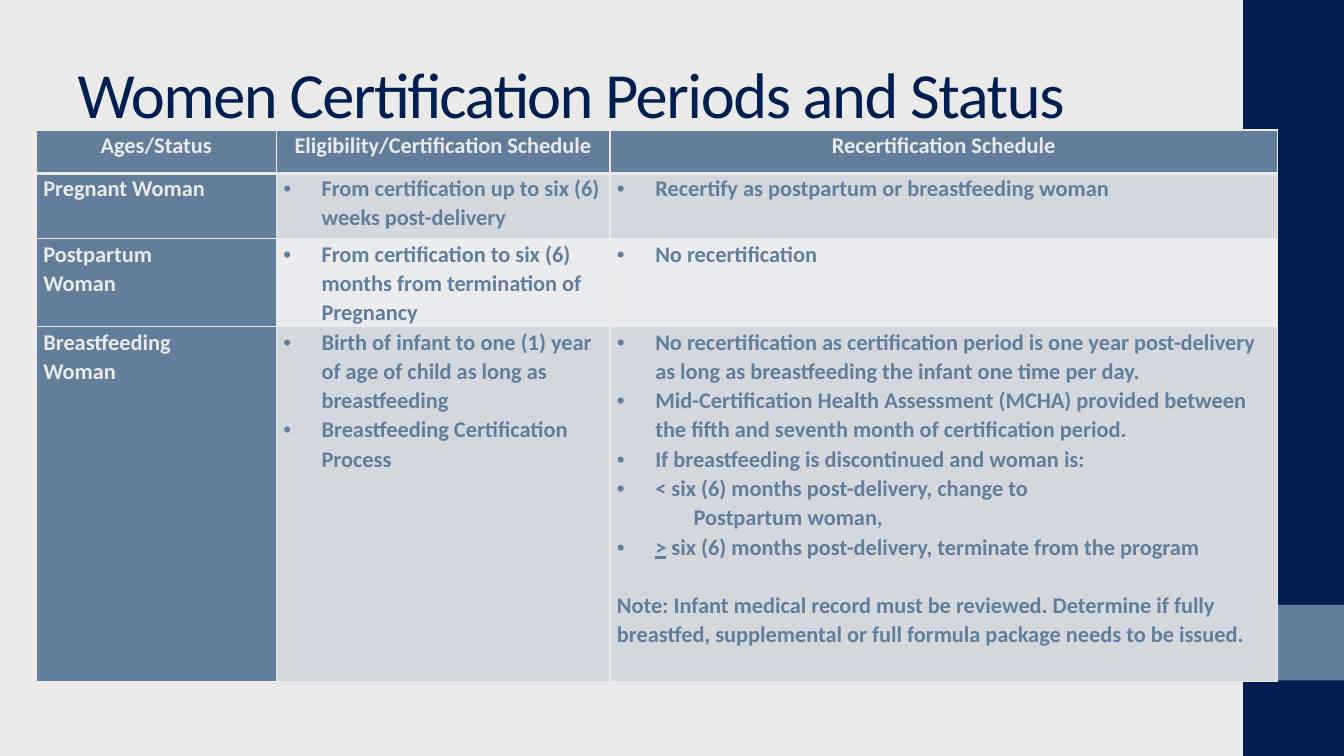
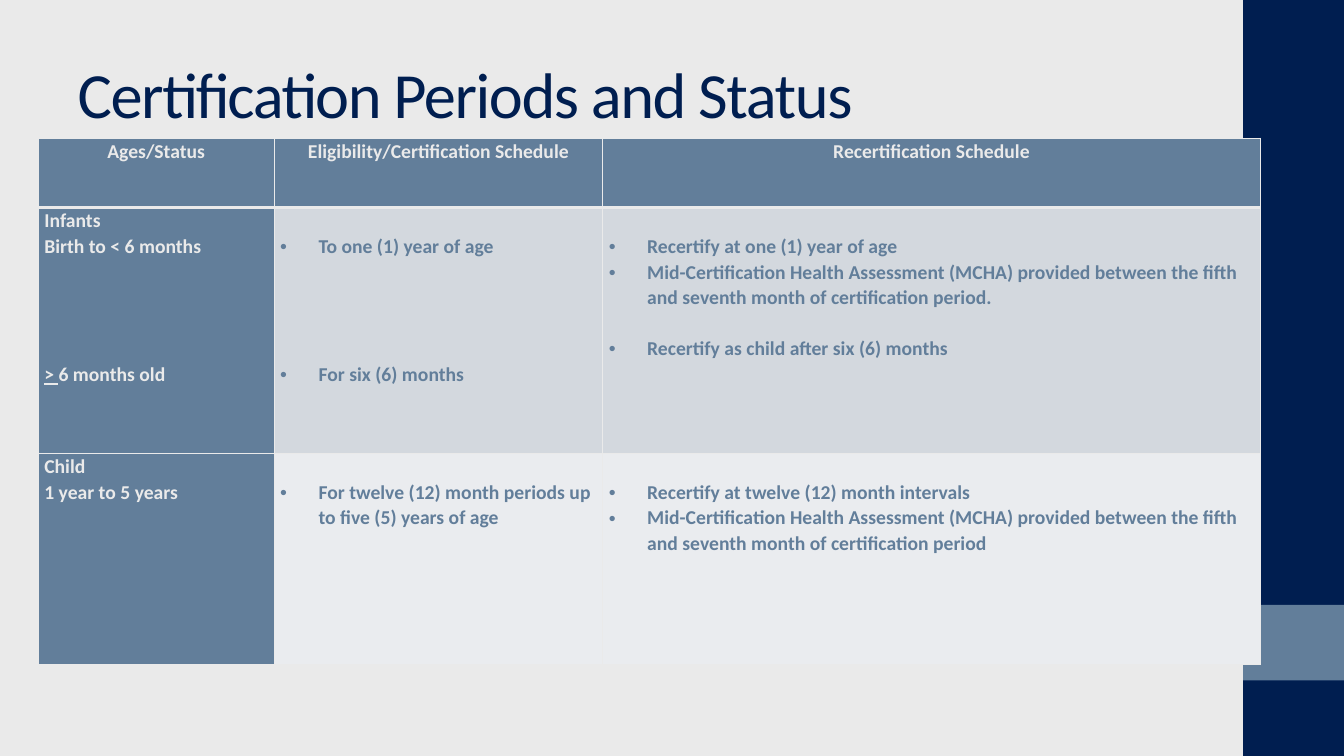
import dataclasses

import lxml.etree
import pptx
import pptx.dml.color
import pptx.enum.shapes
import pptx.enum.text
import pptx.oxml
import pptx.oxml.ns
import pptx.util
from pptx.util import Inches

NAVY, STEEL, PAPER = "001E50", "627E9A", "EAEAEA"
ROW_FILLS = ("D3D8DE", "EAECEF")
FONT = "Calibri"
LINE_SPACING = 1.07
FONT_LINE_HEIGHT = 1.22
BULLET_INDENT = 0.38
BANDS = [(0, 7.5, NAVY), (6, 0.75, STEEL)]
HEADERS = ["Ages/Status", "Eligibility/Certification Schedule", "Recertification Schedule"]


@dataclasses.dataclass
class Line:
    """One paragraph; gap counts the empty lines above it."""
    text: str
    gap: int = 0
    underlined: str = ""
    bullet: bool = False
    indent: float = 0


def bullet(text, gap=0, underlined=""):
    return Line(text, gap, underlined, bullet=True)


MCHA = ("Mid-Certification Health Assessment (MCHA) provided between the fifth "
        "and seventh month of certification period")

SLIDES = [
    {
        "title": "Women Certification Periods and Status",
        "left": 0.36, "top": 1.29, "size": 16, "margin": 0.07,
        "columns": [2.38, 3.31, 6.62],
        "heights": [0.43, 0.65, 0.87, 3.52],
        "rows": [
            [[Line("Pregnant Woman")],
             [bullet("From certification up to six (6) weeks post-delivery")],
             [bullet("Recertify as postpartum or breastfeeding woman")]],
            [[Line("Postpartum"), Line("Woman")],
             [bullet("From certification to six (6) months from termination of Pregnancy")],
             [bullet("No recertification")]],
            [[Line("Breastfeeding"), Line("Woman")],
             [bullet("Birth of infant to one (1) year of age of child as long as breastfeeding"),
              bullet("Breastfeeding Certification Process")],
             [bullet("No recertification as certification period is one year post-delivery "
                     "as long as breastfeeding the infant one time per day."),
              bullet(MCHA + "."),
              bullet("If breastfeeding is discontinued and woman is:"),
              bullet("< six (6) months post-delivery, change to"),
              Line("Postpartum woman,", indent=0.76),
              bullet(" six (6) months post-delivery, terminate from the program",
                     underlined=">"),
              Line("Note: Infant medical record must be reviewed. Determine if fully "
                   "breastfed, supplemental or full formula package needs to be issued.",
                   gap=1)]],
        ],
    },
    {
        "title": "Certification Periods and Status",
        "left": 0.38, "top": 1.37, "size": 14, "margin": 0.06,
        "columns": [2.34, 3.26, 6.52],
        "heights": [0.69, 2.44, 2.09],
        "rows": [
            [[Line("Infants"), Line("Birth to < 6 months"),
              Line("6 months old", gap=4, underlined="> ")],
             [bullet("To one (1) year of age", gap=1), bullet("For six (6) months", gap=4)],
             [bullet("Recertify at one (1) year of age", gap=1),
              bullet(MCHA + "."),
              bullet("Recertify as child after six (6) months", gap=1)]],
            [[Line("Child"), Line("1 year to 5 years")],
             [bullet("For twelve (12) month periods up to five (5) years of age", gap=1)],
             [bullet("Recertify at twelve (12) month intervals", gap=1), bullet(MCHA)]],
        ],
    },
]


def color(value):
    return pptx.dml.color.RGBColor.from_string(value)


def fill(target, value):
    target.fill.solid()
    target.fill.fore_color.rgb = color(value)


def style_font(font, size, value, bold=False):
    font.name, font.size, font.bold = FONT, pptx.util.Pt(size), bold
    font.color.rgb = color(value)


def add_child(parent, tag, **attributes):
    child = lxml.etree.SubElement(parent, pptx.oxml.ns.qn(tag))
    for name, value in attributes.items():
        child.set(name, str(value))
    return child


def move_bands_to_layout(slide, layout):
    """Draw the side bands on a slide, then hand them to its layout."""
    for position, (top, height, value) in enumerate(BANDS):
        band = slide.shapes.add_shape(
            pptx.enum.shapes.MSO_SHAPE.RECTANGLE,
            Inches(12.33), Inches(top), Inches(1), Inches(height))
        fill(band, value)
        band.line.fill.background()
        band.shadow.inherit = False
        layout.shapes._spTree.insert(2 + position, band._element)


def add_title(slide, text):
    title = slide.shapes.title
    title.left, title.top = Inches(0.67), Inches(0.3)
    title.width, title.height = Inches(11.11), Inches(1.25)
    frame = title.text_frame
    frame.text = text
    frame.auto_size = pptx.enum.text.MSO_AUTO_SIZE.NONE
    frame.vertical_anchor = pptx.enum.text.MSO_ANCHOR.MIDDLE
    paragraph = frame.paragraphs[0]
    paragraph.alignment = pptx.enum.text.PP_ALIGN.LEFT
    style_font(paragraph.font, 46, NAVY)
    paragraph.runs[0]._r.get_or_add_rPr().set("spc", "-100")


def border_cell(cell, bottom_width):
    properties = cell._tc.get_or_add_tcPr()
    for side, width in (("L", 1), ("R", 1), ("T", 1), ("B", bottom_width)):
        line = add_child(properties, "a:ln" + side, w=pptx.util.Pt(width))
        add_child(add_child(line, "a:solidFill"), "a:srgbClr", val=PAPER)


def write_cell(cell, lines, size, margin, text_color, centered):
    line_height = pptx.util.Pt(round(size * FONT_LINE_HEIGHT * LINE_SPACING, 1))
    cell.margin_left = cell.margin_right = Inches(margin)
    cell.margin_top = lines[0].gap * line_height
    cell.margin_bottom = 0
    for index, line in enumerate(lines):
        frame = cell.text_frame
        paragraph = frame.add_paragraph() if index else frame.paragraphs[0]
        properties = paragraph._p.get_or_add_pPr()
        indent = BULLET_INDENT if line.bullet else line.indent
        properties.set("marL", str(Inches(indent)))
        properties.set("indent", str(Inches(-indent if line.bullet else 0)))
        if line.bullet:
            add_child(properties, "a:buFont", typeface="Arial")
            add_child(properties, "a:buChar", char="•")
        paragraph.line_spacing = LINE_SPACING
        if index and line.gap:
            paragraph.space_before = line.gap * line_height
        if centered:
            paragraph.alignment = pptx.enum.text.PP_ALIGN.CENTER
        style_font(paragraph.font, size, text_color, bold=True)
        if line.underlined:
            run = paragraph.add_run()
            run.text = line.underlined
            run.font.underline = True
        paragraph.add_run().text = line.text


def add_schedule(slide, content):
    columns, heights = content["columns"], content["heights"]
    table = slide.shapes.add_table(
        len(heights), len(columns), Inches(content["left"]), Inches(content["top"]),
        Inches(sum(columns)), Inches(sum(heights))).table
    for column, width in zip(table.columns, columns):
        column.width = Inches(width)
    for row, height in zip(table.rows, heights):
        row.height = Inches(height)
    rows = [[[Line(header)] for header in HEADERS]] + content["rows"]
    for row_index, row in enumerate(rows):
        is_header = row_index == 0
        for column_index, lines in enumerate(row):
            is_label = is_header or column_index == 0
            cell = table.cell(row_index, column_index)
            border_cell(cell, 3 if is_header else 1)
            fill(cell, STEEL if is_label else ROW_FILLS[(row_index - 1) % 2])
            write_cell(cell, lines, content["size"], content["margin"],
                       PAPER if is_label else STEEL, is_header)


def main():
    presentation = pptx.Presentation()
    presentation.slide_width, presentation.slide_height = Inches(13.33), Inches(7.5)
    fill(presentation.slide_master.background, PAPER)
    layout = presentation.slide_layouts.get_by_name("Title Only")
    for number, content in enumerate(SLIDES):
        slide = presentation.slides.add_slide(layout)
        if number == 0:
            move_bands_to_layout(slide, layout)
        add_title(slide, content["title"])
        add_schedule(slide, content)
    presentation.save("out.pptx")


if __name__ == "__main__":
    main()
